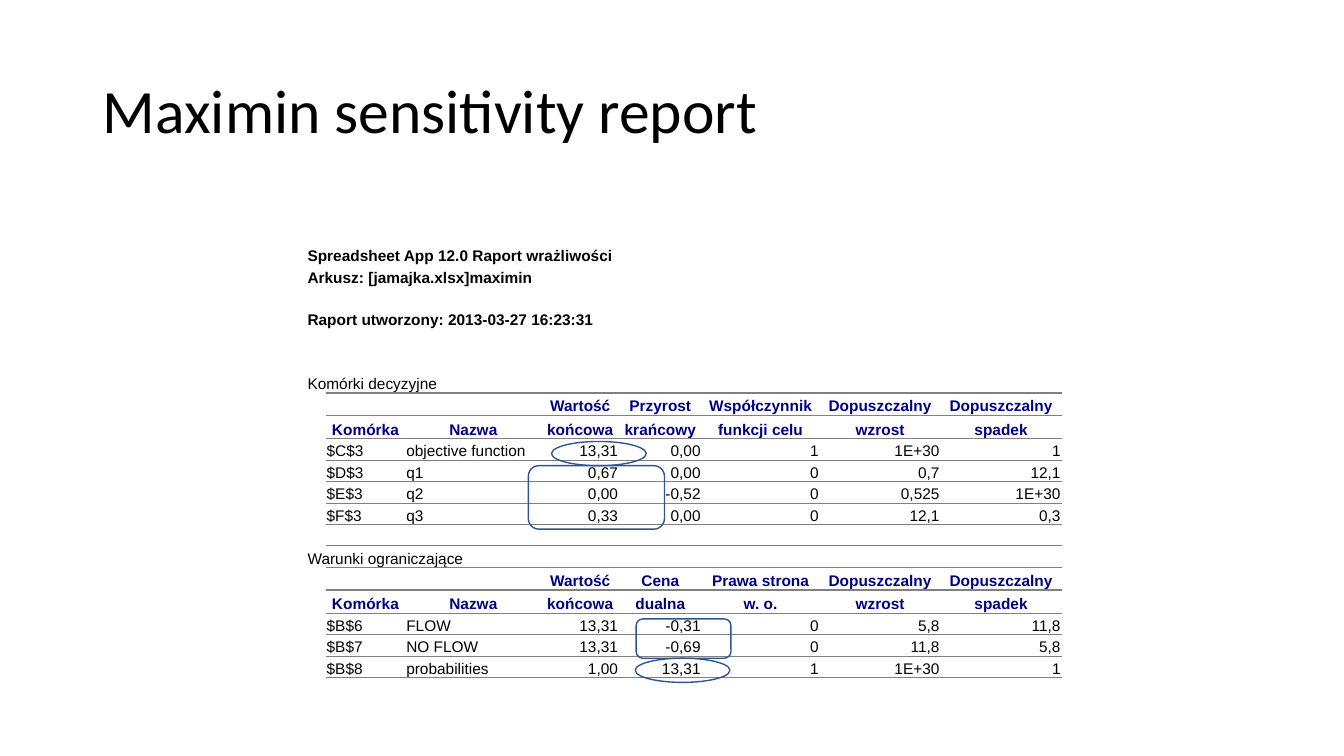
import pptx
import pptx.util
import pptx.dml.color
import pptx.enum.shapes
import pptx.enum.text
import pptx.oxml
import pptx.oxml.ns
import lxml.etree

Inches, Pt = pptx.util.Inches, pptx.util.Pt
SHAPE = pptx.enum.shapes.MSO_SHAPE
ALIGN = pptx.enum.text.PP_ALIGN
ANCHOR = pptx.enum.text.MSO_ANCHOR
qn = pptx.oxml.ns.qn

COLORS = {"text": "000000", "header": "000080", "rule": "808080", "marker": "325491"}
NO_GRID_STYLE = "{2D5ABB26-0587-4C30-8999-92F81FD0307C}"
THICK, THIN = 1, 0.5

HEADLINE = "Maximin sensitivity report"
REPORT_LINES = [
    # text, columns spanned, row height
    ("Spreadsheet App 12.0 Raport wrażliwości", 5, 0.22),
    ("Arkusz: [jamajka.xlsx]maximin", 4, 0.22),
    ("Raport utworzony: 2013-03-27 16:23:31", 4, 0.41),
]
SECTIONS = [
    {
        "name": "Komórki decyzyjne",
        "gap_rows": 2,
        "header": [
            ["", "", "Wartość", "Przyrost", "Współczynnik", "Dopuszczalny", "Dopuszczalny"],
            ["Komórka", "Nazwa", "końcowa", "krańcowy", "funkcji celu", "wzrost", "spadek"],
        ],
        "values": [
            ["$C$3", "objective function", "13,31", "0,00", "1", "1E+30", "1"],
            ["$D$3", "q1", "0,67", "0,00", "0", "0,7", "12,1"],
            ["$E$3", "q2", "0,00", "-0,52", "0", "0,525", "1E+30"],
            ["$F$3", "q3", "0,33", "0,00", "0", "12,1", "0,3"],
        ],
    },
    {
        "name": "Warunki ograniczające",
        "gap_rows": 1,
        "header": [
            ["", "", "Wartość", "Cena", "Prawa strona", "Dopuszczalny", "Dopuszczalny"],
            ["Komórka", "Nazwa", "końcowa", "dualna", "w. o.", "wzrost", "spadek"],
        ],
        "values": [
            ["$B$6", "FLOW", "13,31", "-0,31", "0", "5,8", "11,8"],
            ["$B$7", "NO FLOW", "13,31", "-0,69", "0", "11,8", "5,8"],
            ["$B$8", "probabilities", "1,00", "13,31", "1", "1E+30", "1"],
        ],
    },
]
COLUMN_WIDTHS = [0.19, 0.79, 1.35, 0.77, 0.82, 1.17, 1.2, 1.2]
SECTION_SPAN = 3
GAP_HEIGHT, NAME_HEIGHT, HEADER_HEIGHTS, VALUE_HEIGHT = 0.21, 0.22, (0.22, 0.23), 0.214
MARKERS = [
    (SHAPE.OVAL, 5.47, 4.38, 0.94, 0.24),
    (SHAPE.OVAL, 6.3, 6.53, 0.94, 0.24),
    (SHAPE.ROUNDED_RECTANGLE, 5.24, 4.62, 1.35, 0.63),
    (SHAPE.ROUNDED_RECTANGLE, 6.31, 6.14, 0.94, 0.39),
]


def rgb(name):
    return pptx.dml.color.RGBColor.from_string(COLORS[name])


def add_run(paragraph, text, font, size, color, bold=False):
    run = paragraph.add_run()
    run.text = text
    run.font.name = font
    run.font.size = Pt(size)
    run.font.bold = bold
    run.font.color.rgb = rgb(color)


def add_rule(cell, edge, width):
    """Draw a cell border; edge is lnT or lnB, and lnT must be added last."""
    border = lxml.etree.Element(qn("a:" + edge), w=str(Pt(width)))
    fill = lxml.etree.SubElement(border, qn("a:solidFill"))
    lxml.etree.SubElement(fill, qn("a:srgbClr"), val=COLORS["rule"])
    cell._tc.get_or_add_tcPr().insert(0, border)


def plan_rows():
    """Return one dict per table row: height, texts, role, span, top and bottom rules."""
    def row(height, texts=(), role="text", span=1, top=0, bottom=0):
        return dict(height=height, texts=texts, role=role, span=span, top=top, bottom=bottom)

    rows = [row(height, [text], "report", span) for text, span, height in REPORT_LINES]
    for section in SECTIONS:
        for gap in range(section["gap_rows"]):
            closes_section = section is not SECTIONS[0] and gap == 0
            rows.append(row(GAP_HEIGHT, top=THICK if closes_section else 0))
        rows.append(row(NAME_HEIGHT, [section["name"]], "name", SECTION_SPAN, bottom=THICK))
        upper, lower = section["header"]
        rows.append(row(HEADER_HEIGHTS[0], ["", *upper], "header", top=THICK))
        rows.append(row(HEADER_HEIGHTS[1], ["", *lower], "header", bottom=THIN))
        for values in section["values"]:
            last = values is section["values"][-1]
            rows.append(row(VALUE_HEIGHT, ["", *values], "value",
                            top=THIN, bottom=THICK if last else THIN))
    return rows


def fill_cell(cell, plan, column):
    cell.fill.background()
    cell.vertical_anchor = ANCHOR.BOTTOM
    cell.margin_left = cell.margin_right = cell.margin_top = Inches(0.01)
    cell.margin_bottom = 0
    text = plan["texts"][column] if column < len(plan["texts"]) else ""
    paragraph = cell.text_frame.paragraphs[0]
    if text:
        header = plan["role"] == "header"
        if header:
            paragraph.alignment = ALIGN.CENTER
        elif plan["role"] == "value" and column > 2:
            paragraph.alignment = ALIGN.RIGHT
        add_run(paragraph, text, "Arial", 11, "header" if header else "text",
                header or plan["role"] == "report")
    else:
        lxml.etree.SubElement(paragraph._p, qn("a:endParaRPr"), sz="1100")
    if column >= max(plan["span"], 1):
        for edge, width in (("lnB", plan["bottom"]), ("lnT", plan["top"])):
            if width:
                add_rule(cell, edge, width)


def add_report(slide):
    rows = plan_rows()
    frame = slide.shapes.add_table(
        len(rows), len(COLUMN_WIDTHS), Inches(3.04), Inches(2.41),
        Inches(sum(COLUMN_WIDTHS)), Inches(sum(plan["height"] for plan in rows)))
    report = frame.table
    report.first_row = report.horz_banding = False
    report._tbl.tblPr.find(qn("a:tableStyleId")).text = NO_GRID_STYLE
    for column, width in zip(report.columns, COLUMN_WIDTHS):
        column.width = Inches(width)
    for index, plan in enumerate(rows):
        report.rows[index].height = Inches(plan["height"])
        for column in range(len(COLUMN_WIDTHS)):
            fill_cell(report.cell(index, column), plan, column)
        if plan["span"] > 1:
            report.cell(index, 0).merge(report.cell(index, plan["span"] - 1))


def add_headline(slide):
    box = slide.shapes.add_textbox(Inches(0.92), Inches(0.4), Inches(11.5), Inches(1.45))
    box.text_frame.word_wrap = True
    box.text_frame.vertical_anchor = ANCHOR.MIDDLE
    paragraph = box.text_frame.paragraphs[0]
    paragraph.line_spacing = 0.9
    add_run(paragraph, HEADLINE, "Calibri", 44, "text")


def add_markers(slide):
    for kind, *place in MARKERS:
        marker = slide.shapes.add_shape(kind, *map(Inches, place))
        marker.shadow.inherit = False
        marker.fill.background()
        marker.line.color.rgb = rgb("marker")
        marker.line.width = Pt(1)


def main():
    deck = pptx.Presentation()
    deck.slide_width, deck.slide_height = Inches(13.33), Inches(7.5)
    slide = deck.slides.add_slide(deck.slide_layouts[6])
    add_report(slide)
    add_headline(slide)
    add_markers(slide)
    deck.save("out.pptx")


if __name__ == "__main__":
    main()
